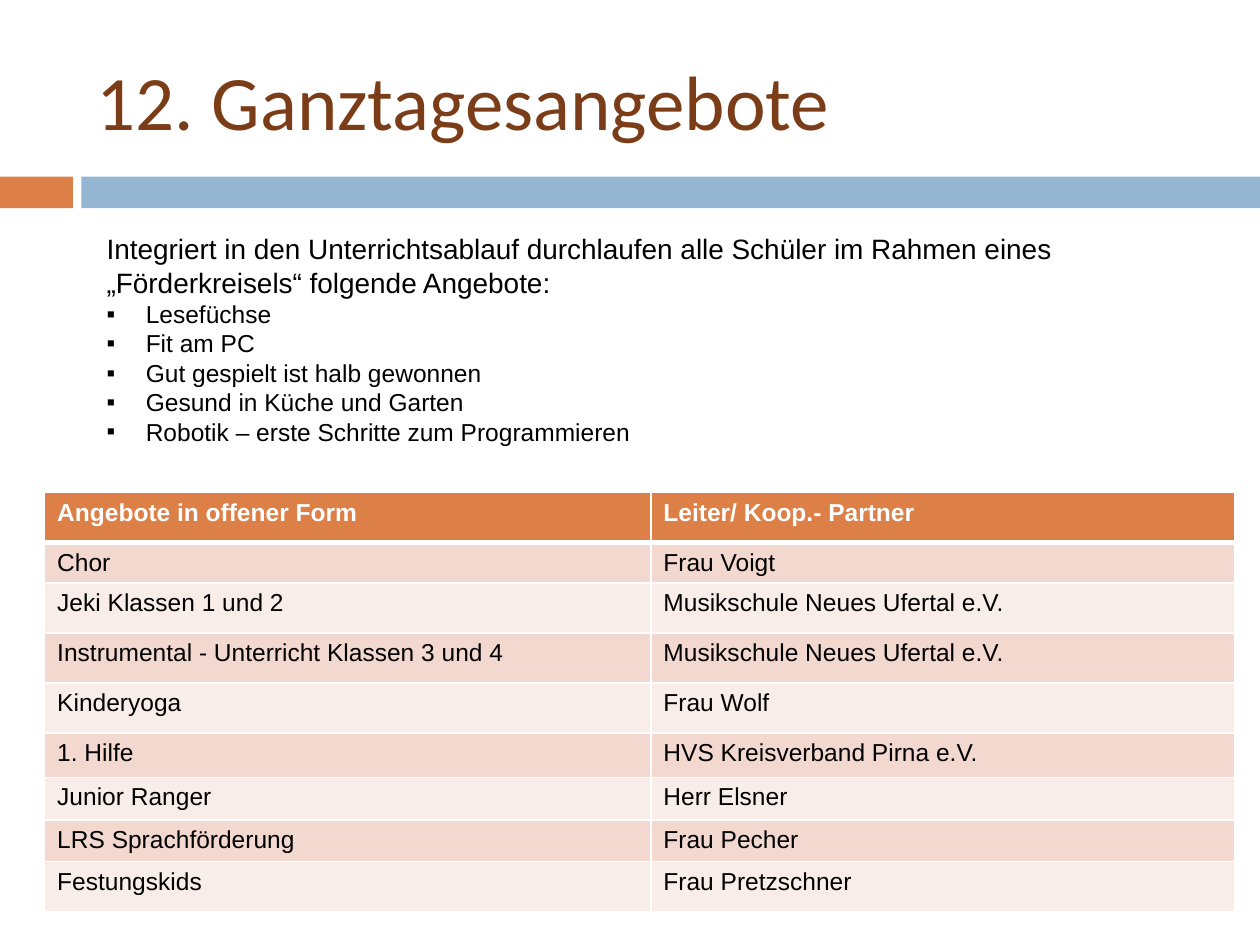
from lxml import etree
from pptx import Presentation
from pptx.dml.color import RGBColor
from pptx.enum.shapes import MSO_SHAPE
from pptx.enum.text import MSO_ANCHOR, PP_ALIGN
from pptx.oxml.ns import qn
from pptx.util import Cm, Pt

RECT = MSO_SHAPE.RECTANGLE
MIDDLE = MSO_ANCHOR.MIDDLE
LEFT = PP_ALIGN.LEFT
ORANGE, BLUE, BROWN = "DD8047", "94B6D2", "7B3D17"
WHITE, BLACK = "FFFFFF", "000000"
BANDS = ("F2D8CF", "F9EDE9")

INTRO = ("Integriert in den Unterrichtsablauf durchlaufen alle Schüler im "
         "Rahmen eines „Förderkreisels“ folgende Angebote:")
TOPICS = ["Lesefüchse", "Fit am PC", "Gut gespielt ist halb gewonnen",
          "Gesund in Küche und Garten",
          "Robotik – erste Schritte zum Programmieren"]
SCHOOL = "Musikschule Neues Ufertal e.V."
# Height in cm, offer, leader
ROWS = [
    (1.01, "Angebote in offener Form", "Leiter/ Koop.- Partner"),
    (0.74, "Chor", "Frau Voigt"),
    (1.01, "Jeki Klassen 1 und 2", SCHOOL),
    (1.01, "Instrumental - Unterricht Klassen 3 und 4", SCHOOL),
    (1.01, "Kinderyoga", "Frau Wolf"),
    (0.89, "1. Hilfe", "HVS Kreisverband Pirna e.V."),
    (0.86, "Junior Ranger", "Herr Elsner"),
    (0.84, "LRS Sprachförderung", "Frau Pecher"),
    (1.01, "Festungskids", "Frau Pretzschner"),
]


def color(code):
    return RGBColor.from_string(code)


def write(para, text, size=14, font="Arial", ink=BLACK, bold=False,
          bullet=None):
    para.alignment = LEFT
    run = para.add_run()
    run.text = text
    run.font.size = Pt(size)
    run.font.name = font
    run.font.bold = bold
    run.font.color.rgb = color(ink)
    if bullet:
        props = para._p.get_or_add_pPr()
        props.set("marL", str(Cm(0.79)))
        props.set("indent", str(-Cm(0.79)))
        etree.SubElement(props, qn("a:buFont"), typeface=font)
        etree.SubElement(props, qn("a:buChar"), char=bullet)


def add_title(slide, left, top, width, height):
    title = slide.shapes.title
    title.left, title.top = Cm(left), Cm(top)
    title.width, title.height = Cm(width), Cm(height)
    frame = title.text_frame
    frame.vertical_anchor = MIDDLE
    write(frame.paragraphs[0], "12. Ganztagesangebote", size=44,
          font="Calibri", ink=BROWN)


def add_stripe(slide, left, top, width, height):
    """Draw a short orange bar and a long blue one with a gap between."""
    short, gap = 1.47, 0.17
    start = short + gap
    for shift, span, fill in ((0, short, ORANGE),
                              (start, width - start, BLUE)):
        bar = slide.shapes.add_shape(RECT, Cm(left + shift), Cm(top),
                                     Cm(span), Cm(height))
        bar.shadow.inherit = False
        bar.fill.solid()
        bar.fill.fore_color.rgb = color(fill)
        bar.line.fill.background()


def add_intro(slide, left, top, width, height):
    box = slide.shapes.add_textbox(Cm(left), Cm(top), Cm(width), Cm(height))
    frame = box.text_frame
    frame.word_wrap = True
    write(frame.paragraphs[0], INTRO, size=16)
    for topic in TOPICS:
        write(frame.add_paragraph(), topic, bullet="▪")


def set_edges(cell, above, below):
    """Give a cell white borders, with the top and bottom widths in points."""
    props = cell._tc.get_or_add_tcPr()
    edges = (("L", 1), ("R", 1), ("T", above), ("B", below))
    for spot, (side, width) in enumerate(edges):
        line = etree.Element(qn(f"a:ln{side}"), w=str(Pt(width)))
        fill = etree.SubElement(line, qn("a:solidFill"))
        etree.SubElement(fill, qn("a:srgbClr"), val=WHITE)
        props.insert(spot, line)


def add_offers(slide, left, top, width, height):
    split = 12.22
    table = slide.shapes.add_table(len(ROWS), 2, Cm(left), Cm(top),
                                   Cm(width), Cm(height)).table
    table.columns[0].width = Cm(split)
    table.columns[1].width = Cm(width - split)
    for r, (tall, *texts) in enumerate(ROWS):
        table.rows[r].height = Cm(tall)
        head = r == 0
        for c, text in enumerate(texts):
            cell = table.cell(r, c)
            cell.fill.solid()
            cell.fill.fore_color.rgb = color(
                ORANGE if head else BANDS[(r - 1) % 2])
            set_edges(cell, above=3 if r == 1 else 1, below=3 if head else 1)
            write(cell.text_frame.paragraphs[0], text, bold=head,
                  ink=WHITE if head else BLACK)


def main():
    deck = Presentation()
    deck.slide_width, deck.slide_height = Cm(25.4), Cm(19.05)
    slide = deck.slides.add_slide(deck.slide_layouts[5])
    add_stripe(slide, 0, 3.56, 25.4, 0.64)
    add_title(slide, 1.7, 0.64, 22.66, 2.74)
    add_offers(slide, 0.9, 9.93, 24, sum(row[0] for row in ROWS))
    add_intro(slide, 1.9, 4.55, 21.2, 4.62)
    deck.save("out.pptx")


if __name__ == "__main__":
    main()
